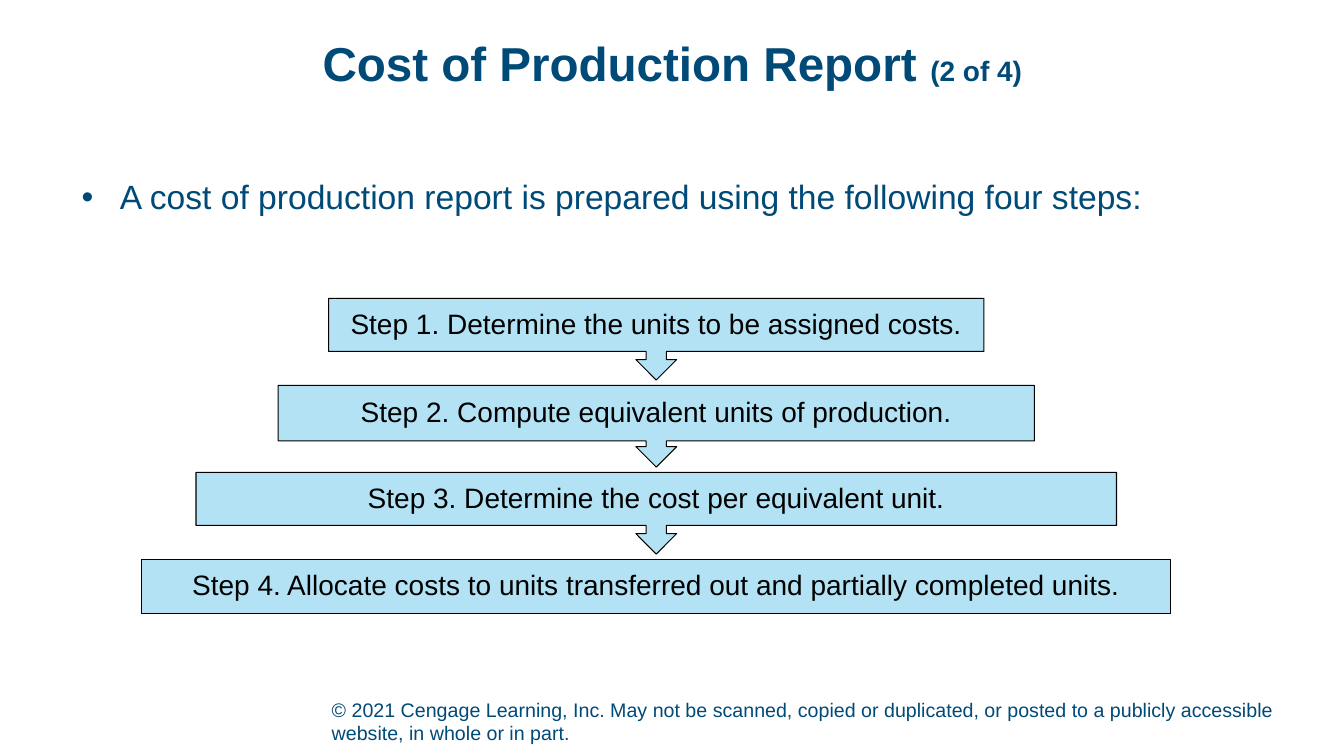
from dataclasses import dataclass

from lxml import etree
from pptx import Presentation
from pptx.dml.color import RGBColor
from pptx.enum.shapes import MSO_SHAPE
from pptx.enum.text import MSO_ANCHOR, MSO_AUTO_SIZE, PP_ALIGN
from pptx.oxml.ns import qn
from pptx.util import Inches, Pt

CALLOUT, RECT = MSO_SHAPE.DOWN_ARROW_CALLOUT, MSO_SHAPE.RECTANGLE
TOP, MIDDLE, BOTTOM = MSO_ANCHOR.TOP, MSO_ANCHOR.MIDDLE, MSO_ANCHOR.BOTTOM
LEFT, CENTER = PP_ALIGN.LEFT, PP_ALIGN.CENTER
NO_AUTOFIT = MSO_AUTO_SIZE.NONE
TITLE_ONLY = 5

SLIDE_W, SLIDE_H = Inches(13.33), Inches(7.5)
FONT = "Arial"
NAVY, SKY, BLACK, WHITE = "004A78", "B3E2F4", "000000", "FFFFFF"

# Shares of the slide, in percent
STEP_CENTER = 48.83
STEP_TOP = 39.47
STEP_PITCH = 11.51
BOX_H, CALLOUT_H = 7.2, 10.8


@dataclass(frozen=True)
class Area:
    """A rectangle in percent of the slide's width and height."""
    left: float
    top: float
    width: float
    height: float

    def emu(self) -> tuple[int, int, int, int]:
        return (int(SLIDE_W * self.left / 100), int(SLIDE_H * self.top / 100),
                int(SLIDE_W * self.width / 100), int(SLIDE_H * self.height / 100))


@dataclass(frozen=True)
class Step:
    text: str
    width: float
    shape: MSO_SHAPE = CALLOUT
    height: float = CALLOUT_H
    box_share: float = 0.65


STEPS = [
    Step("Step 1. Determine the units to be assigned costs.", 48.76),
    Step("Step 2. Compute equivalent units of production.", 56.26, box_share=0.68),
    Step("Step 3. Determine the cost per equivalent unit.", 68.49),
    Step("Step 4. Allocate costs to units transferred out and partially completed units.",
         76.59, RECT, BOX_H),
]


def rgb(value: str) -> RGBColor:
    return RGBColor.from_string(value)


def add_bullet(p, indent: float) -> None:
    pPr = p._p.get_or_add_pPr()
    pPr.set("marL", str(Inches(indent)))
    pPr.set("indent", str(-Inches(indent)))
    color = etree.SubElement(pPr, qn("a:buClr"))
    etree.SubElement(color, qn("a:srgbClr"), val=NAVY)
    etree.SubElement(pPr, qn("a:buFont"), typeface=FONT)
    etree.SubElement(pPr, qn("a:buChar"), char="•")


def write(sp, *parts: tuple[str, int], color: str = NAVY, bold: bool = False,
          align: PP_ALIGN = LEFT, anchor: MSO_ANCHOR = TOP, spacing: float = 0.9,
          bottom: float = 0, bullet_indent: float = 0) -> None:
    """Fill a shape with one paragraph made of (text, size) parts."""
    tf = sp.text_frame
    tf.word_wrap = True
    tf.auto_size = NO_AUTOFIT
    tf.vertical_anchor = anchor
    tf.margin_left = tf.margin_top = tf.margin_right = 0
    tf.margin_bottom = Inches(bottom)
    p = tf.paragraphs[0]
    p.alignment = align
    p.line_spacing = spacing
    p.space_before = Pt(0)
    if bullet_indent:
        add_bullet(p, bullet_indent)
    for text, size in parts:
        r = p.add_run()
        r.text = text
        r.font.name = FONT
        r.font.size = Pt(size)
        r.font.bold = bold
        r.font.color.rgb = rgb(color)


def add_step(s, step: Step, row: int) -> None:
    area = Area(STEP_CENTER - step.width / 2, STEP_TOP + row * STEP_PITCH,
                step.width, step.height)
    sp = s.shapes.add_shape(step.shape, *area.emu())
    sp.shadow.inherit = False
    sp.fill.solid()
    sp.fill.fore_color.rgb = rgb(SKY)
    sp.line.color.rgb = rgb(BLACK)
    sp.line.width = Pt(0.75)
    if step.shape == CALLOUT:
        sp.adjustments[3] = step.box_share
    write(sp, (step.text, 20), color=BLACK, align=CENTER, anchor=MIDDLE)


def main() -> None:
    prs = Presentation()
    prs.slide_width, prs.slide_height = SLIDE_W, SLIDE_H
    s = prs.slides.add_slide(prs.slide_layouts[TITLE_ONLY])
    s.background.fill.solid()
    s.background.fill.fore_color.rgb = rgb(WHITE)

    title = s.shapes.title
    title.left, title.top, title.width, title.height = Area(6.9, 5.33, 86.27, 9.87).emu()
    write(title, ("Cost of Production Report ", 34), ("(2 of 4)", 20),
          bold=True, align=CENTER)

    intro = s.shapes.add_textbox(*Area(6.08, 23.87, 87.85, 7.2).emu())
    write(intro, ("A cost of production report is prepared using the following four steps:", 24),
          bullet_indent=0.38)

    for row, step in enumerate(STEPS):
        add_step(s, step, row)

    notice = s.shapes.add_textbox(*Area(24.68, 92.27, 73.44, 6.93).emu())
    write(notice, ("© 2021 Cengage Learning, Inc. May not be scanned, copied or duplicated, "
                   "or posted to a publicly accessible website, in whole or in part.", 14),
          anchor=BOTTOM, spacing=1.0, bottom=0.05)

    prs.save("out.pptx")


if __name__ == "__main__":
    main()
